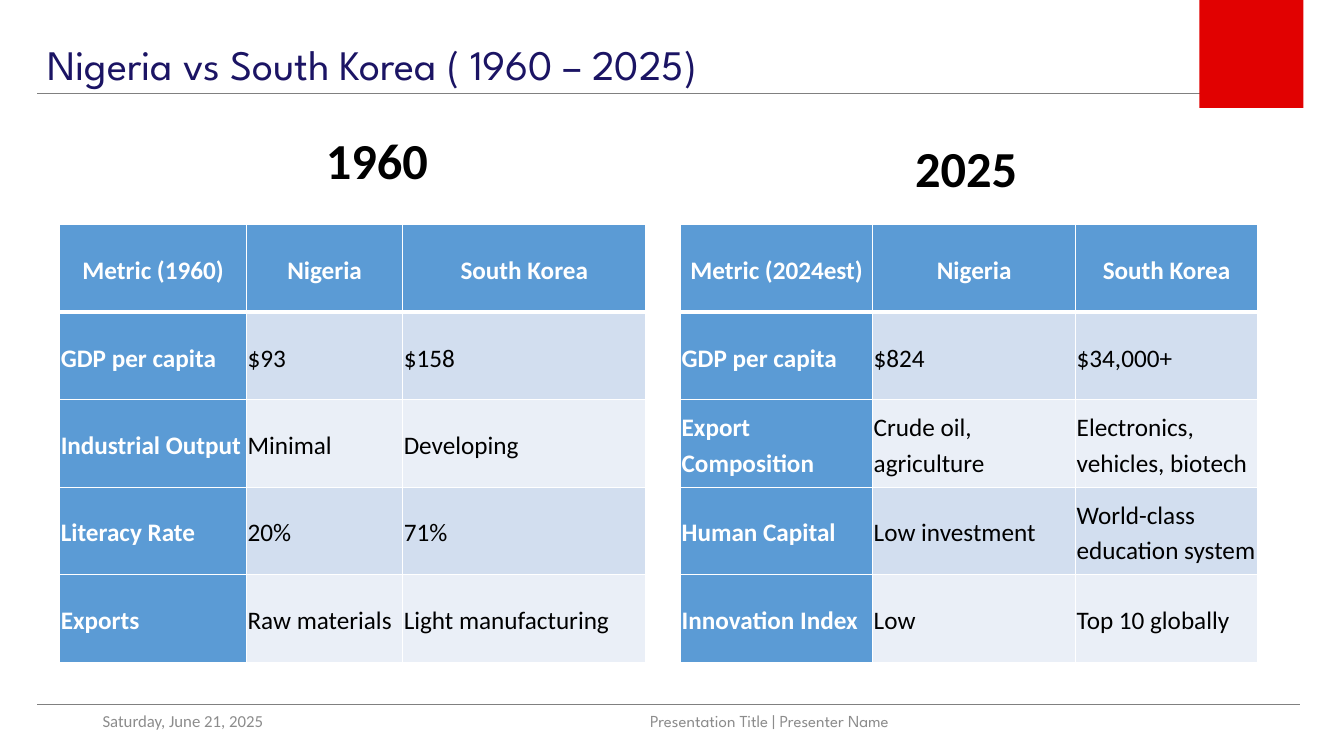
"""Build a slide comparing Nigeria and South Korea in 1960 and 2025."""
from dataclasses import dataclass

from lxml.etree import SubElement
from pptx import Presentation
from pptx.dml.color import RGBColor
from pptx.enum.shapes import MSO_CONNECTOR as Connector, MSO_SHAPE as Preset
from pptx.enum.text import MSO_ANCHOR as Anchor, PP_ALIGN as Align
from pptx.oxml.ns import qn
from pptx.slide import Slide
from pptx.table import _Cell as Cell
from pptx.text.text import TextFrame
from pptx.util import Pt

NAVY = RGBColor(0x1B, 0x14, 0x64)
BLACK = RGBColor(0, 0, 0)
WHITE = RGBColor(0xFF, 0xFF, 0xFF)
RED = RGBColor(0xE1, 0x01, 0x01)
RULE_GRAY = RGBColor(0x80, 0x80, 0x80)
FOOTER_GRAY = RGBColor(0x8C, 0x8C, 0x8C)
BLUE = RGBColor(0x5B, 0x9B, 0xD5)
BAND_DARK = RGBColor(0xD2, 0xDE, 0xEF)
BAND_LIGHT = RGBColor(0xEA, 0xEF, 0xF7)

BODY_FONT = "Calibri"
BRAND_FONT = "League Spartan"
TABLE_TOP = 160.6
ROW_HEIGHT = 62.5
CELL_MARGIN = 0.72


@dataclass(frozen=True)
class Box:
    left: float
    top: float
    width: float
    height: float


@dataclass(frozen=True)
class Label:
    text: str
    box: Box
    size: float
    color: RGBColor
    font: str = BODY_FONT
    bold: bool = False
    align: Align = Align.LEFT
    anchor: Anchor = Anchor.MIDDLE
    line_spacing: float = 1.0
    space_before: float = 0


@dataclass(frozen=True)
class MetricTable:
    left: float
    column_widths: tuple[float, ...]
    rows: tuple[tuple[str, ...], ...]


LABELS = (
    Label("Nigeria vs South Korea ( 1960 – 2025)", Box(26.6, 23.8, 668, 44), 30, NAVY,
          font=BRAND_FONT, anchor=Anchor.TOP),
    Label("1960", Box(66.2, 95.8, 406, 43.2), 36, BLACK, bold=True, align=Align.CENTER,
          anchor=Anchor.BOTTOM, line_spacing=0.8, space_before=10),
    Label("2025", Box(486, 97.2, 408.2, 47.5), 36, BLACK, bold=True, align=Align.CENTER,
          anchor=Anchor.BOTTOM, line_spacing=0.8, space_before=10),
    Label("Saturday, June 21, 2025", Box(66.2, 500.4, 216, 28.8), 12, FOOTER_GRAY),
    Label("Presentation Title | Presenter Name", Box(318.2, 500.4, 324, 28.8), 12,
          FOOTER_GRAY, font=BRAND_FONT, align=Align.RIGHT),
)

TABLES = (
    MetricTable(42.7, (133.4, 111.6, 173.7), (
        ("Metric (1960)", "Nigeria", "South Korea"),
        ("GDP per capita", "$93", "$158"),
        ("Industrial Output", "Minimal", "Developing"),
        ("Literacy Rate", "20%", "71%"),
        ("Exports", "Raw materials", "Light manufacturing"),
    )),
    MetricTable(486.2, (137.2, 145, 129.8), (
        ("Metric (2024est)", "Nigeria", "South Korea"),
        ("GDP per capita", "$824", "$34,000+"),
        ("Export Composition", "Crude oil, agriculture", "Electronics, vehicles, biotech"),
        ("Human Capital", "Low investment", "World-class education system"),
        ("Innovation Index", "Low", "Top 10 globally"),
    )),
)


def write_text(frame: TextFrame, text: str, *, size: float, color: RGBColor,
               font: str = BODY_FONT, bold: bool = False, align: Align = Align.LEFT,
               line_spacing: float = 1.0, space_before: float = 0,
               space_after: float = 0) -> None:
    frame.word_wrap = True
    paragraph = frame.paragraphs[0]
    paragraph.alignment = align
    paragraph.line_spacing = line_spacing
    paragraph.space_before = Pt(space_before)
    paragraph.space_after = Pt(space_after)
    run = paragraph.add_run()
    run.text = text
    run.font.name = font
    run.font.size = Pt(size)
    run.font.bold = bold
    run.font.color.rgb = color


def add_label(slide: Slide, label: Label) -> None:
    box = label.box
    shape = slide.shapes.add_textbox(Pt(box.left), Pt(box.top), Pt(box.width), Pt(box.height))
    shape.text_frame.vertical_anchor = label.anchor
    write_text(shape.text_frame, label.text, size=label.size, color=label.color,
               font=label.font, bold=label.bold, align=label.align,
               line_spacing=label.line_spacing, space_before=label.space_before)


def add_borders(cell: Cell, top: float, bottom: float) -> None:
    properties = cell._tc.get_or_add_tcPr()
    for side, width in (("L", 1), ("R", 1), ("T", top), ("B", bottom)):
        line = SubElement(properties, qn(f"a:ln{side}"), w=str(Pt(width)))
        fill = SubElement(line, qn("a:solidFill"))
        SubElement(fill, qn("a:srgbClr"), val=str(WHITE))


def add_metric_table(slide: Slide, metrics: MetricTable) -> None:
    row_count, column_count = len(metrics.rows), len(metrics.column_widths)
    table = slide.shapes.add_table(
        row_count, column_count, Pt(metrics.left), Pt(TABLE_TOP),
        Pt(sum(metrics.column_widths)), Pt(ROW_HEIGHT * row_count)).table
    for column, width in zip(table.columns, metrics.column_widths):
        column.width = Pt(width)
    for row_index, texts in enumerate(metrics.rows):
        table.rows[row_index].height = Pt(ROW_HEIGHT)
        is_header = row_index == 0
        band = BAND_DARK if row_index % 2 else BAND_LIGHT
        for column_index, text in enumerate(texts):
            cell = table.cell(row_index, column_index)
            is_heading = is_header or column_index == 0
            cell.margin_left = cell.margin_right = Pt(CELL_MARGIN)
            cell.margin_top = cell.margin_bottom = Pt(CELL_MARGIN)
            cell.vertical_anchor = Anchor.MIDDLE
            add_borders(cell, top=3 if row_index == 1 else 1, bottom=3 if is_header else 1)
            cell.fill.solid()
            cell.fill.fore_color.rgb = BLUE if is_heading else band
            write_text(cell.text_frame, text, size=18, bold=is_heading,
                       color=WHITE if is_heading else BLACK,
                       align=Align.CENTER if is_header else Align.LEFT,
                       line_spacing=1.15, space_after=8)


def add_rule(slide: Slide, top: float) -> None:
    rule = slide.shapes.add_connector(Connector.STRAIGHT, Pt(26.6), Pt(top), Pt(928.8), Pt(top))
    rule.line.color.rgb = RULE_GRAY
    rule.line.width = Pt(0.5)
    SubElement(rule._element.spPr, qn("a:effectLst"))


def add_corner_block(slide: Slide) -> None:
    block = slide.shapes.add_shape(Preset.RECTANGLE, Pt(856.8), Pt(-1.4), Pt(74.2), Pt(78.5))
    block.shadow.inherit = False
    block.fill.solid()
    block.fill.fore_color.rgb = RED
    block.line.fill.background()


def main() -> None:
    presentation = Presentation()
    presentation.slide_width = Pt(960)
    presentation.slide_height = Pt(540)
    slide = presentation.slides.add_slide(presentation.slide_layouts[6])
    for label in LABELS:
        add_label(slide, label)
    for metrics in TABLES:
        add_metric_table(slide, metrics)
    for top in (67, 503.3):
        add_rule(slide, top)
    add_corner_block(slide)
    presentation.save("out.pptx")


if __name__ == "__main__":
    main()
